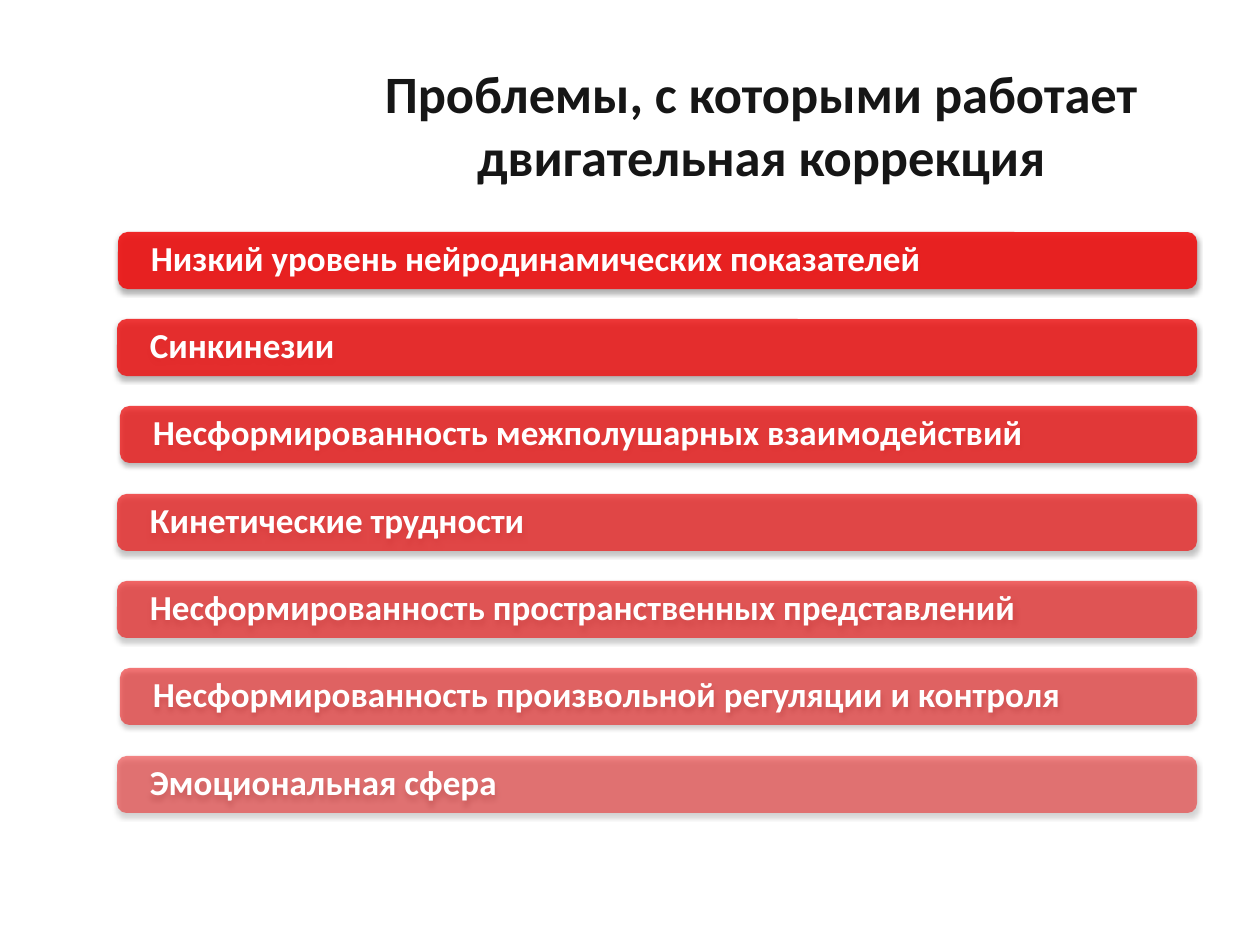
"""Build a slide listing the problems that motor correction works with."""
from dataclasses import dataclass

from lxml.etree import SubElement
from pptx import Presentation
from pptx.dml.color import RGBColor as Rgb
from pptx.enum.shapes import MSO_SHAPE as Shape
from pptx.enum.text import MSO_ANCHOR as Anchor, PP_ALIGN as Align
from pptx.oxml.ns import qn
from pptx.slide import Slide
from pptx.text.text import TextFrame
from pptx.util import Emu, Pt

PX = 914400 / 126
COLORS = {"title": "161616", "bar": "EE1212", "label": "FFFFFF", "shade": "000000"}
TOP, RIGHT, HIGH, INSET = 232, 1197, 57, 30
SPAN = 524


@dataclass
class Bar:
    left: int
    alpha: int
    text: str


BARS = [
    Bar(118, 90, "Низкий уровень нейродинамических показателей"),
    Bar(117, 83, "Синкинезии"),
    Bar(120, 77, "Несформированность межполушарных взаимодействий"),
    Bar(117, 70, "Кинетические трудности"),
    Bar(117, 63, "Несформированность пространственных представлений"),
    Bar(120, 57, "Несформированность произвольной регуляции и контроля"),
    Bar(117, 50, "Эмоциональная сфера"),
]


def px(size: int) -> Emu:
    return Emu(round(size * PX))


def write(frame: TextFrame, text: str, size: int, color: str, align: Align) -> None:
    frame.word_wrap = True
    frame.vertical_anchor = Anchor.MIDDLE
    frame.text = text
    para = frame.paragraphs[0]
    para.alignment = align
    font = para.runs[0].font
    font.name, font.size, font.bold = "Calibri", Pt(size), True
    font.color.rgb = Rgb.from_string(COLORS[color])


def set_alpha(color, value: int) -> None:
    SubElement(color, qn("a:alpha"), val=str(value * 1000))


def draw_bar(slide: Slide, bar: Bar, top: int) -> None:
    box = slide.shapes.add_shape(
        Shape.ROUNDED_RECTANGLE, px(bar.left), px(top), px(RIGHT - bar.left), px(HIGH))
    box.shadow.inherit = False
    box.line.fill.background()
    box.fill.solid()
    box.fill.fore_color.rgb = Rgb.from_string(COLORS["bar"])
    props = box.fill._xPr
    set_alpha(props.find(qn("a:solidFill"))[0], bar.alpha)
    shade = SubElement(props.find(qn("a:effectLst")), qn("a:outerShdw"),
                       blurRad=str(Pt(3.1)), dist=str(Pt(1.8)),
                       dir="5400000", rotWithShape="0")
    set_alpha(SubElement(shade, qn("a:srgbClr"), val=COLORS["shade"]), 35)
    frame = box.text_frame
    frame.margin_left = frame.margin_right = px(INSET)
    frame.margin_top = frame.margin_bottom = 0
    write(frame, bar.text, 20, "label", Align.LEFT)
    frame.paragraphs[0].line_spacing = 0.9


def main() -> None:
    deck = Presentation()
    deck.slide_width, deck.slide_height = px(1260), px(945)
    slide = deck.slides.add_slide(deck.slide_layouts[6])
    title = slide.shapes.add_textbox(px(294), px(32), px(935), px(183))
    write(title.text_frame, "Проблемы, с которыми работает двигательная коррекция",
          30, "title", Align.CENTER)
    for i, bar in enumerate(BARS):
        draw_bar(slide, bar, TOP + SPAN * i // (len(BARS) - 1))
    deck.save("out.pptx")


if __name__ == "__main__":
    main()
